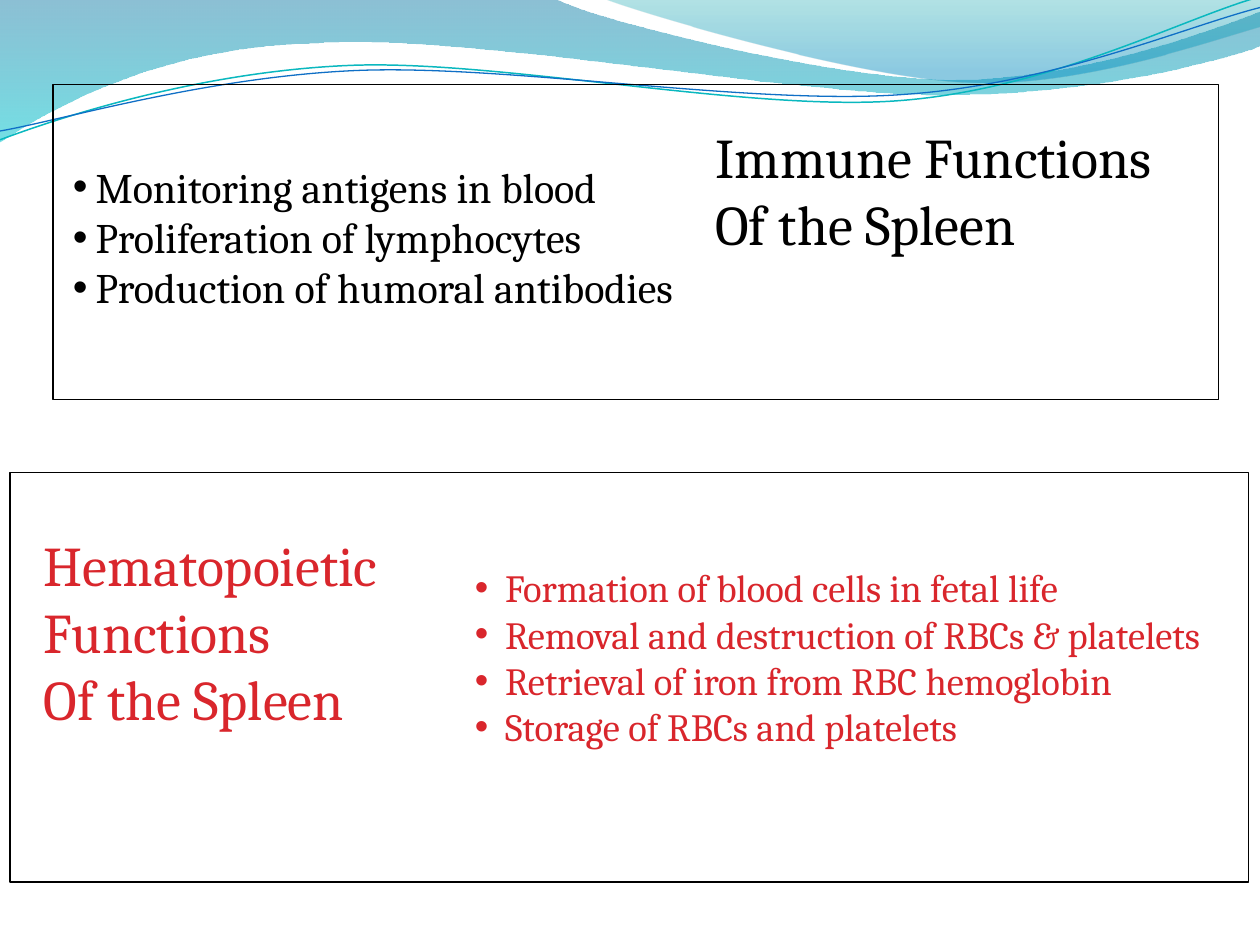
from lxml import etree
from pptx import Presentation
from pptx.dml.color import RGBColor
from pptx.enum.shapes import MSO_SHAPE
from pptx.enum.text import MSO_AUTO_SIZE
from pptx.oxml.ns import qn
from pptx.util import Inches, Pt

RECTANGLE = MSO_SHAPE.RECTANGLE
GROW = MSO_AUTO_SIZE.SHAPE_TO_FIT_TEXT

SLIDE_WIDTH, SLIDE_HEIGHT = Inches(10), Inches(7.5)
COLUMN = SLIDE_WIDTH / 10
ROW = SLIDE_HEIGHT / 7.5
FONT = "Cambria"

BLACK = RGBColor(0x00, 0x00, 0x00)
RED = RGBColor(0xD9, 0x26, 0x2C)
DEEP_BLUE = RGBColor(0x00, 0x74, 0xA1)
AQUA = RGBColor(0x00, 0xC6, 0xCF)
TEAL = RGBColor(0x00, 0xA1, 0xA9)
SKY = RGBColor(0x00, 0x8B, 0xBF)
TEAL_LINE = RGBColor(0x0A, 0xB8, 0xBF)
BLUE_LINE = RGBColor(0x0F, 0x6F, 0xC6)

BROAD_WAVE = [
    (0, 0), (4.4, -0.01),
    (4.76, 0.17, 6.64, 0.63, 7.58, 0.63), (8.53, 0.63, 9.58, 0.26, 10, 0.09),
    (10.01, 0.36),
    (9.83, 0.44, 8.7, 0.76, 7.46, 0.75), (6.22, 0.75, 3.82, 0.28, 2.57, 0.34),
    (1.29, 0.36, 0.46, 0.83, -0.01, 1.13),
]
RIGHT_WAVE = [
    (4.79, -0.01),
    (5.09, 0.11, 6.82, 0.62, 7.69, 0.65), (8.56, 0.69, 9.61, 0.32, 10, 0.21),
    (10, 0),
]
TEAL_STRAND = [
    (0, 1.11),
    (0.48, 0.93, 1.58, 0.57, 2.77, 0.52), (3.95, 0.47, 5.93, 0.89, 7.13, 0.8),
    (8.33, 0.71, 9.38, 0.15, 9.98, -0.02),
]
BLUE_STRAND = [
    (0, 1.04),
    (0.47, 0.96, 1.64, 0.61, 2.83, 0.56), (4.03, 0.51, 5.97, 0.84, 7.17, 0.75),
    (8.36, 0.67, 9.41, 0.21, 10, 0.06),
]


def grid(left, top, width, height):
    return [round(n) for n in (left * COLUMN, top * ROW, width * COLUMN, height * ROW)]


def bend(outline, segments):
    steps = iter(list(outline._element.spPr.iter(qn("a:lnTo"))))
    for segment in segments[1:]:
        group = [next(steps) for _ in range(len(segment) // 2)]
        if len(group) == 3:
            curve = etree.Element(qn("a:cubicBezTo"))
            group[0].addprevious(curve)
            for step in group:
                curve.append(step[0])
                step.getparent().remove(step)


def add_outline(slide, segments, close):
    points = [
        (x * COLUMN, y * ROW)
        for segment in segments
        for x, y in zip(segment[::2], segment[1::2])
    ]
    builder = slide.shapes.build_freeform(*points[0])
    builder.add_line_segments(points[1:], close=close)
    outline = builder.convert_to_shape()
    bend(outline, segments)
    outline.shadow.inherit = False
    return outline


def add_wave(slide, segments, stops):
    wave = add_outline(slide, segments, True)
    wave.line.fill.background()
    wave.fill.gradient()
    wave.fill.gradient_angle = 270
    for stop, (position, color, _) in zip(wave.fill.gradient_stops, stops):
        stop.position = position
        stop.color.rgb = color
    for tint, (_, _, opacity) in zip(wave._element.spPr.iter(qn("a:srgbClr")), stops):
        etree.SubElement(tint, qn("a:alpha"), val=str(opacity * 1000))


def add_strand(slide, segments, color, width):
    strand = add_outline(slide, segments, False)
    strand.fill.background()
    strand.line.color.rgb = color
    strand.line.width = Pt(width)


def add_frame(slide, area):
    frame = slide.shapes.add_shape(RECTANGLE, *grid(*area))
    frame.shadow.inherit = False
    frame.fill.background()
    frame.line.color.rgb = BLACK
    frame.line.width = Pt(0.75)


def add_bullet(paragraph, indent):
    properties = paragraph._p.get_or_add_pPr()
    properties.set("marL", str(Inches(indent)))
    properties.set("indent", str(-Inches(indent)))
    etree.SubElement(properties, qn("a:buFont"), typeface="Arial")
    etree.SubElement(properties, qn("a:buChar"), char="•")


def add_text(slide, area, lines, size, color, wrap, indent=0):
    frame = slide.shapes.add_textbox(*grid(*area)).text_frame
    frame.word_wrap = wrap
    frame.auto_size = GROW
    frame.text = "\n".join(lines)
    for paragraph in frame.paragraphs:
        if indent:
            add_bullet(paragraph, indent)
        for run in paragraph.runs:
            run.font.name = FONT
            run.font.size = Pt(size)
            run.font.color.rgb = color


def main():
    presentation = Presentation()
    presentation.slide_width, presentation.slide_height = SLIDE_WIDTH, SLIDE_HEIGHT
    slide = presentation.slides.add_slide(presentation.slide_layouts[6])

    add_wave(slide, BROAD_WAVE, [(0, DEEP_BLUE, 45), (1, AQUA, 55)])
    add_wave(slide, RIGHT_WAVE, [(0, TEAL, 30), (0.8, SKY, 45)])
    add_strand(slide, TEAL_STRAND, TEAL_LINE, 0.85)
    add_strand(slide, BLUE_STRAND, BLUE_LINE, 0.75)

    immune_functions = [
        "Monitoring antigens in blood",
        "Proliferation of lymphocytes",
        "Production of humoral antibodies",
    ]
    hematopoietic_functions = [
        "Formation of blood cells in fetal life",
        "Removal and destruction of RBCs & platelets",
        "Retrieval of iron from RBC hemoglobin",
        "Storage of RBCs and platelets",
    ]
    immune_title = ["Immune Functions", "Of the Spleen"]
    hematopoietic_title = ["Hematopoietic", "Functions", "Of the Spleen"]

    add_text(slide, (0.48, 1.23, 4.98, 1.31), immune_functions, 24, BLACK, False, 0.18)
    add_text(slide, (3.67, 4.43, 6.08, 1.95), hematopoietic_functions, 22, RED, True, 0.24)
    add_text(slide, (5.58, 0.92, 3.96, 1.21), immune_title, 32, BLACK, True)
    add_text(slide, (0.25, 4.16, 2.9, 1.78), hematopoietic_title, 32, RED, False)

    add_frame(slide, (0.08, 3.75, 9.83, 3.25))
    add_frame(slide, (0.42, 0.67, 9.25, 2.5))

    presentation.save("out.pptx")


if __name__ == "__main__":
    main()
